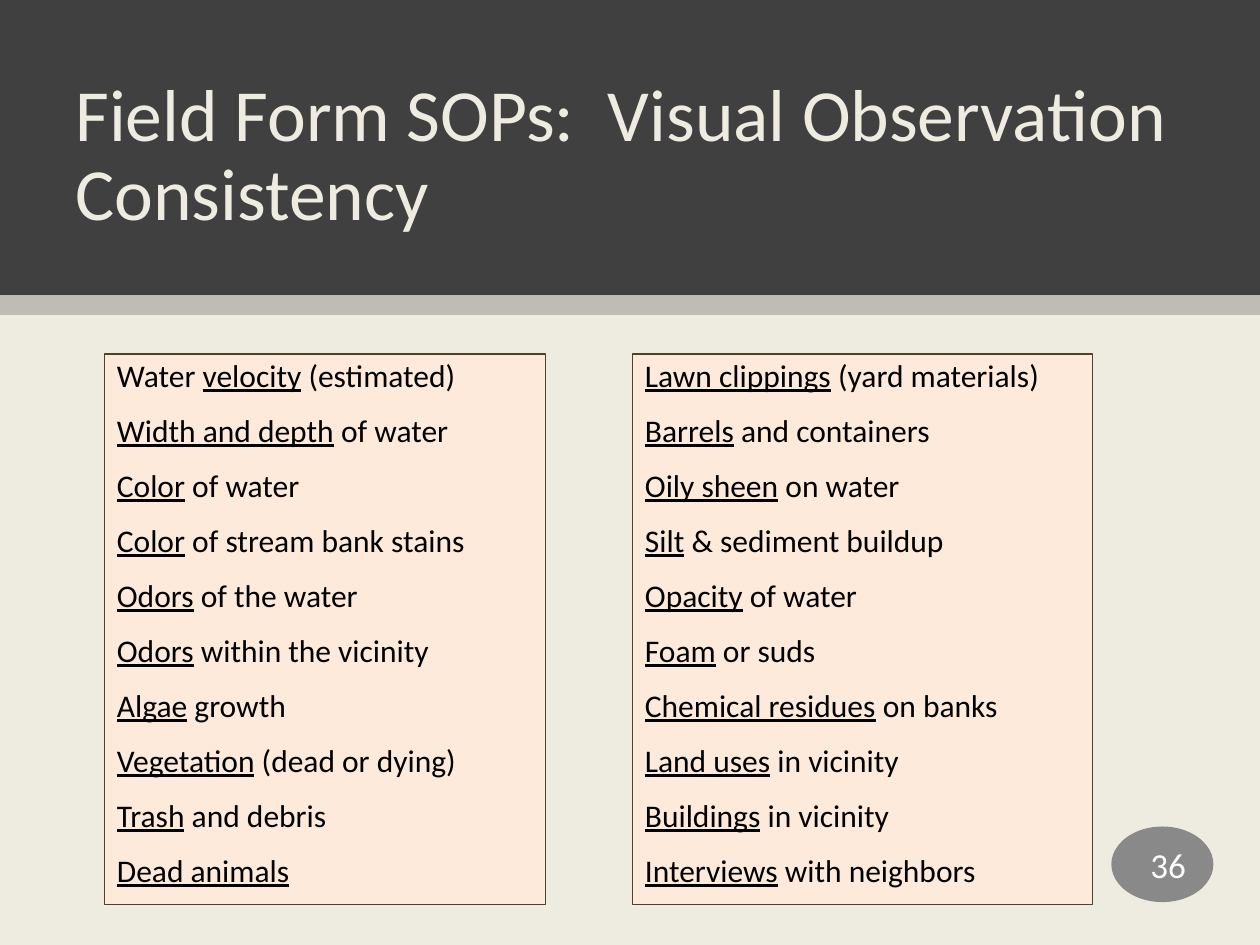
from lxml import etree
from pptx import Presentation
from pptx.dml.color import RGBColor
from pptx.enum.shapes import MSO_SHAPE
from pptx.enum.text import MSO_ANCHOR, PP_ALIGN
from pptx.oxml.ns import qn
from pptx.util import Inches, Pt

CREAM, CHARCOAL, PEACH, BROWN = "EEECE1", "404040", "FDEADA", "4A452A"
BLACK, WHITE, GRAY = "000000", "FFFFFF", "898989"

WATER_CHECKS = [
    ("Water ", "velocity", " (estimated)"),
    ("", "Width and depth", " of water"),
    ("", "Color", " of water"),
    ("", "Color", " of stream bank stains"),
    ("", "Odors", " of the water"),
    ("", "Odors", " within the vicinity"),
    ("", "Algae", " growth"),
    ("", "Vegetation", " (dead or dying)"),
    ("", "Trash", " and debris"),
    ("", "Dead animals", ""),
]
SITE_CHECKS = [
    ("", "Lawn clippings", " (yard materials)"),
    ("", "Barrels", " and containers"),
    ("", "Oily sheen", " on water"),
    ("", "Silt", " & sediment buildup"),
    ("", "Opacity", " of water"),
    ("", "Foam", " or suds"),
    ("", "Chemical residues", " on banks"),
    ("", "Land uses", " in vicinity"),
    ("", "Buildings", " in vicinity"),
    ("", "Interviews", " with neighbors"),
]


def color(value):
    return RGBColor.from_string(value)


def add_panel(slide, box, fill, line=None, alpha=None, kind=MSO_SHAPE.RECTANGLE):
    panel = slide.shapes.add_shape(kind, *map(Inches, box))
    panel.shadow.inherit = False
    panel.fill.solid()
    panel.fill.fore_color.rgb = color(fill)
    if alpha is not None:
        tint = panel.fill._xPr.find(qn("a:solidFill"))[0]
        etree.SubElement(tint, qn("a:alpha"), val=str(alpha * 1000))
    if line:
        panel.line.color.rgb = color(line)
        panel.line.width = Pt(0.75)
    else:
        panel.line.fill.background()
    return panel


def style_paragraph(paragraph, size, ink, align=PP_ALIGN.LEFT):
    paragraph.alignment = align
    paragraph.font.name = "Calibri"
    paragraph.font.size = Pt(size)
    paragraph.font.color.rgb = color(ink)


def add_title(slide, box, text):
    title = slide.shapes.add_textbox(*map(Inches, box)).text_frame
    title.word_wrap = True
    title.vertical_anchor = MSO_ANCHOR.MIDDLE
    heading = title.paragraphs[0]
    heading.text = text
    heading.line_spacing = 0.9
    heading.space_after = Pt(6)
    style_paragraph(heading, 42, CREAM)


def add_checklist(slide, box, checks):
    checklist = add_panel(slide, box, PEACH, BROWN).text_frame
    checklist.word_wrap = True
    checklist.vertical_anchor = MSO_ANCHOR.TOP
    for index, (lead, term, rest) in enumerate(checks):
        item = checklist.add_paragraph() if index else checklist.paragraphs[0]
        item.line_spacing = 0.9
        item.space_before = Pt(12)
        style_paragraph(item, 18, BLACK)
        for words, underlined in ((lead, False), (term, True), (rest, False)):
            if words:
                run = item.add_run()
                run.text = words
                run.font.underline = underlined


def add_page_number(slide, box, number):
    badge = add_panel(slide, box, GRAY, kind=MSO_SHAPE.OVAL).text_frame
    badge.vertical_anchor = MSO_ANCHOR.MIDDLE
    page = badge.paragraphs[0]
    page.text = number
    page.space_after = Pt(6)
    style_paragraph(page, 20, WHITE, PP_ALIGN.RIGHT)


def main():
    deck = Presentation()
    deck.slide_width, deck.slide_height = Inches(10), Inches(7.5)
    slide = deck.slides.add_slide(deck.slide_layouts[6])
    add_panel(slide, (0, 0, 10, 7.5), CREAM)
    add_panel(slide, (0, 0, 10, 2.34), CHARCOAL)
    add_title(slide, (0.5, 0.47, 9.33, 1.55),
              "Field Form SOPs:  Visual Observation Consistency")
    add_panel(slide, (0, 2.34, 10, 0.16), BLACK, alpha=20)
    add_checklist(slide, (0.83, 2.81, 3.5, 4.37), WATER_CHECKS)
    add_checklist(slide, (5.02, 2.81, 3.65, 4.37), SITE_CHECKS)
    add_page_number(slide, (8.82, 6.56, 0.81, 0.6), "36")
    deck.save("out.pptx")


if __name__ == "__main__":
    main()
